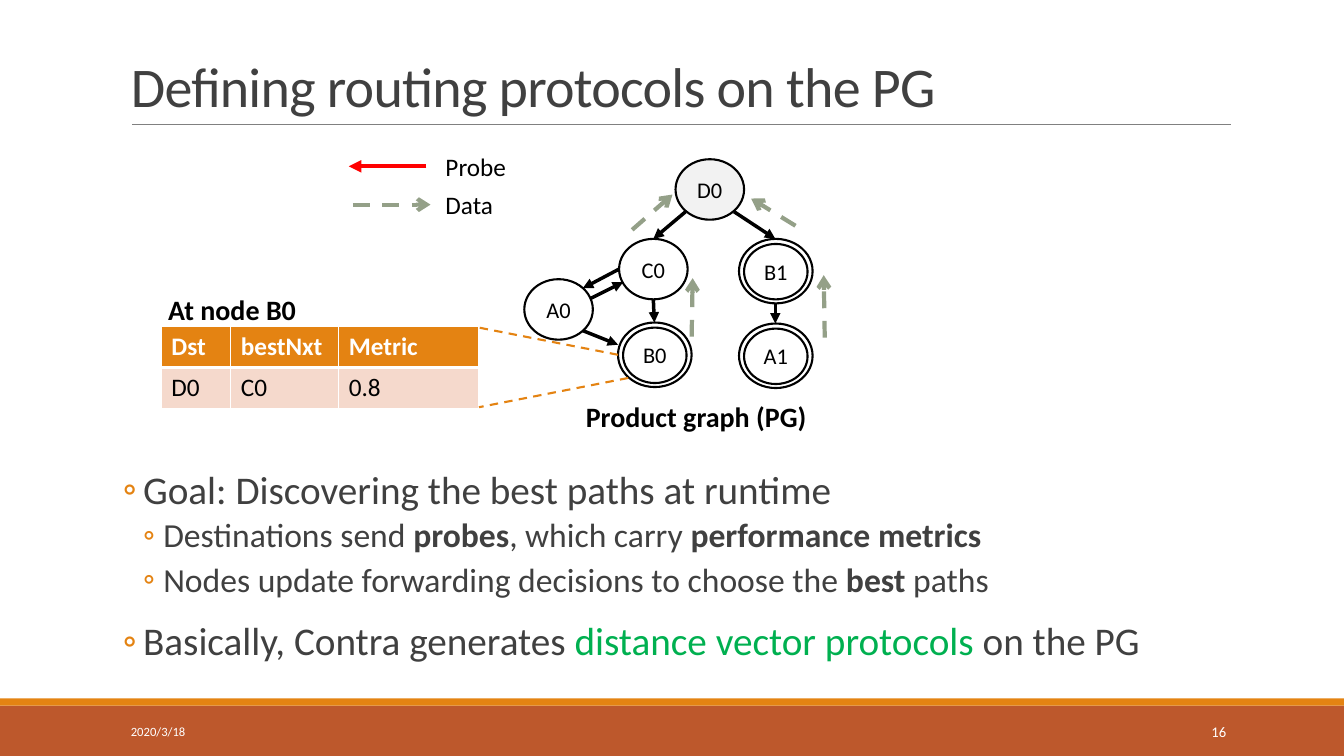
from lxml import etree
from pptx import Presentation
from pptx.dml.color import RGBColor
from pptx.enum import dml, shapes, text
from pptx.oxml import ns
from pptx.util import Inches, Pt

BLACK = RGBColor(0x00, 0x00, 0x00)
WHITE = RGBColor(0xFF, 0xFF, 0xFF)
INK = RGBColor(0x40, 0x40, 0x40)
RULE = RGBColor(0x80, 0x80, 0x80)
ORANGE = RGBColor(0xE4, 0x83, 0x12)
RUST = RGBColor(0xBD, 0x58, 0x2C)
PEACH = RGBColor(0xF5, 0xD9, 0xCC)
PALE = RGBColor(0xF2, 0xF2, 0xF2)
SAGE = RGBColor(0x94, 0xA0, 0x88)
RED = RGBColor(0xFF, 0x00, 0x00)
GREEN = RGBColor(0x00, 0xB0, 0x50)
FONT = "Calibri"
ALIGN = text.PP_ALIGN
ANCHOR = text.MSO_ANCHOR


def child(parent, tag, **attributes):
    """Append a drawing element and return it."""
    return etree.SubElement(parent, ns.qn(tag), attributes)


def style(run, size, color=BLACK, bold=False):
    """Set the font of a run."""
    run.font.name, run.font.size = FONT, Pt(size)
    run.font.color.rgb, run.font.bold = color, bold


def label(slide, box, words, size, color=BLACK, bold=False, align=ALIGN.LEFT,
          anchor=ANCHOR.TOP, wrap=True):
    """Add one line of text in a box and return its run."""
    frame = slide.shapes.add_textbox(*map(Inches, box)).text_frame
    frame.word_wrap, frame.vertical_anchor = wrap, anchor
    paragraph = frame.paragraphs[0]
    paragraph.text, paragraph.alignment = words, align
    style(paragraph.runs[0], size, color, bold)
    return paragraph.runs[0]


def line(slide, start, end, color, width, dashed=False, arrow=None):
    """Draw a straight line, with an optional arrowhead at its end."""
    stroke = slide.shapes.add_connector(
        shapes.MSO_CONNECTOR.STRAIGHT, *map(Inches, (*start, *end)))
    stroke.line.color.rgb, stroke.line.width = color, Pt(width)
    if dashed:
        stroke.line.dash_style = dml.MSO_LINE.DASH
    properties = stroke._element.spPr
    if arrow:
        child(properties.find(ns.qn("a:ln")), "a:tailEnd", type=arrow)
    child(properties, "a:effectLst")


def band(slide, box, color):
    """Draw a plain filled rectangle."""
    strip = slide.shapes.add_shape(shapes.MSO_SHAPE.RECTANGLE, *map(Inches, box))
    strip.shadow.inherit = False
    strip.fill.solid()
    strip.fill.fore_color.rgb = color
    strip.line.fill.background()


def ring(slide, box, fill=None):
    """Draw a black outlined ellipse and return it."""
    oval = slide.shapes.add_shape(shapes.MSO_SHAPE.OVAL, *map(Inches, box))
    oval.shadow.inherit = False
    if fill is None:
        oval.fill.background()
    else:
        oval.fill.solid()
        oval.fill.fore_color.rgb = fill
    oval.line.color.rgb, oval.line.width = BLACK, Pt(1.5)
    return oval


def node(slide, left, top, name, double=False, fill=None):
    """Draw a named graph node; accepting nodes have a double ring."""
    width, height = (0.73, 0.64) if double else (0.68, 0.6)
    if double:
        ring(slide, (left + 0.05, top + 0.05, width - 0.1, height - 0.09))
    oval = ring(slide, (left, top, width, height), fill)
    frame = oval.text_frame
    frame.word_wrap, frame.vertical_anchor = False, ANCHOR.MIDDLE
    frame.text = name
    frame.paragraphs[0].alignment = ALIGN.CENTER
    style(frame.paragraphs[0].runs[0], 16)


def header(slide, left, top, width, height):
    """Place the title and the rule under it."""
    title = label(slide, (left, top, width, height),
                  "Defining routing protocols on the PG", 40, INK,
                  anchor=ANCHOR.BOTTOM)
    title._r.get_or_add_rPr().set("spc", "-50")
    title._r.getparent().get_or_add_pPr()
    slide.shapes[-1].text_frame.paragraphs[0].line_spacing = 0.85
    base = top + height
    line(slide, (left + 0.11, base), (left + width + 0.01, base), RULE, 0.5)


def footer(slide, left, top, width, height):
    """Place the two bands with date and page number."""
    band(slide, (left, top + 0.07, width, height - 0.07), RUST)
    band(slide, (left, top, width, 0.07), ORANGE)
    label(slide, (left + 1.2, top + 0.13, 2.7, 0.4), "2020/3/18", 9, WHITE,
          anchor=ANCHOR.MIDDLE)
    label(slide, (left + 10.83, top + 0.13, 1.43, 0.4), "16", 10.5, WHITE,
          align=ALIGN.RIGHT, anchor=ANCHOR.MIDDLE)


def legend(slide, left, top):
    """Explain the probe and data arrows."""
    label(slide, (left + 0.86, top, 0.81, 0.4), "Probe", 18, wrap=False)
    line(slide, (left + 0.77, top + 0.2), (left, top + 0.2), RED, 3, arrow="triangle")
    label(slide, (left + 0.86, top + 0.38, 0.68, 0.4), "Data", 18, wrap=False)
    line(slide, (left + 0.04, top + 0.58), (left + 0.81, top + 0.58), SAGE, 3,
         True, "arrow")


def product_graph(slide, left, top):
    """Draw the product graph with its edges, data flows and caption."""
    edges = [((2.08, 0.52), (2.49, 0.79)), ((2.49, 1.43), (2.49, 1.63)),
             ((1.28, 1.39), (1.29, 1.62)), ((1.6, 0.52), (1.28, 0.79)),
             ((0.94, 1.09), (0.58, 1.28)), ((0.58, 1.7), (0.93, 1.84)),
             ((0.66, 1.38), (0.98, 1.22))]
    flows = [((1.66, 1.76), (1.67, 1.18)), ((1.07, 0.7), (1.47, 0.35)),
             ((2.69, 0.66), (2.25, 0.39)), ((2.98, 1.77), (2.97, 1.15))]
    nodes = [(1.5, 0, "D0", False, PALE), (0.94, 0.79, "C0"), (0, 1.19, "A0"),
             (0.93, 1.62, "B0", True), (2.13, 1.63, "A1", True),
             (2.13, 0.79, "B1", True)]

    def place(point):
        return left + point[0], top + point[1]

    for start, end in edges:
        line(slide, place(start), place(end), BLACK, 2.5, arrow="triangle")
    for x, y, *details in nodes:
        node(slide, *place((x, y)), *details)
    for start, end in flows:
        line(slide, place(start), place(end), SAGE, 3, True, "arrow")
    label(slide, (*place((0.36, 2.33)), 2.69, 0.44), "Product graph (PG)", 20,
          bold=True, align=ALIGN.CENTER)


def border(cell, top, bottom):
    """Give a cell white borders of the given top and bottom widths."""
    properties = cell._tc.get_or_add_tcPr()
    for side, width in (("L", 1), ("R", 1), ("T", top), ("B", bottom)):
        edge = child(properties, "a:ln" + side, w=str(Pt(width)))
        child(child(edge, "a:solidFill"), "a:srgbClr", val=str(WHITE))


def forwarding_table(slide, left, top):
    """Place the table of node B0 and the dashed lines to that node."""
    widths, row_height = (0.69, 1.07, 1.39), 0.405
    rows = [("Dst", "bestNxt", "Metric"), ("D0", "C0", "0.8")]
    looks = [(ORANGE, WHITE, True, 1, 3), (PEACH, BLACK, False, 3, 1)]
    grid = slide.shapes.add_table(
        len(rows), len(widths), Inches(left), Inches(top), Inches(sum(widths)),
        Inches(row_height * len(rows))).table
    for column, width in zip(grid.columns, widths):
        column.width = Inches(width)
    for r, (entries, look) in enumerate(zip(rows, looks)):
        fill, color, bold, upper, lower = look
        for c, entry in enumerate(entries):
            cell = grid.cell(r, c)
            border(cell, upper, lower)
            cell.fill.solid()
            cell.fill.fore_color.rgb = fill
            cell.text = entry
            style(cell.text_frame.paragraphs[0].runs[0], 18, color, bold)
    label(slide, (left - 0.03, top - 0.39, 1.48, 0.44), "At node B0", 20,
          bold=True, wrap=False)
    right = left + sum(widths)
    line(slide, (left + 4.53, top + 0.28), (right, top + 0.01), ORANGE, 1.5, True)
    line(slide, (left + 4.63, top + 0.51), (right, top + 0.8), ORANGE, 1.5, True)


def goals(slide, left, top, width, height):
    """Place the bulleted text, two levels deep."""
    points = [
        (0, [("Goal: Discovering the best paths at runtime",)]),
        (1, [("Destinations send ",), ("probes", INK, True), (", which carry ",),
             ("performance metrics", INK, True)]),
        (1, [("Nodes update forwarding decisions to choose the ",),
             ("best", INK, True), (" paths",)]),
        (0, [("Basically, Contra generates ",),
             ("distance vector protocols ", GREEN), ("on the PG",)])]
    levels = [(28, 0.22, 12, 2), (24, 0.42, 2, 4)]
    frame = slide.shapes.add_textbox(
        *map(Inches, (left, top, width, height))).text_frame
    frame.word_wrap = True
    frame.margin_left = frame.margin_right = 0
    for index, (level, pieces) in enumerate(points):
        point = frame.add_paragraph() if index else frame.paragraphs[0]
        size, indent, before, after = levels[level]
        point.level, point.line_spacing = level, 0.9
        point.space_before, point.space_after = Pt(before), Pt(after)
        properties = point._p.get_or_add_pPr()
        properties.set("marL", str(Inches(indent)))
        properties.set("indent", str(Inches(-0.2)))
        child(child(properties, "a:buClr"), "a:srgbClr", val=str(ORANGE))
        child(properties, "a:buFont", typeface=FONT)
        child(properties, "a:buChar", char="◦")
        for words, *look in pieces:
            run = point.add_run()
            run.text = words
            style(run, size, *(look or [INK]))


def main():
    """Build the slide and save it."""
    deck = Presentation()
    deck.slide_width, deck.slide_height = Inches(13.33), Inches(7.5)
    slide = deck.slides.add_slide(deck.slide_layouts[6])
    footer(slide, 0, 6.93, 13.33, 0.57)
    header(slide, 1.2, 0.31, 11, 0.92)
    goals(slide, 1.2, 4.62, 11, 2.13)
    product_graph(slide, 5.2, 1.58)
    legend(slide, 3.46, 1.45)
    forwarding_table(slide, 1.6, 3.24)
    deck.save("out.pptx")


if __name__ == "__main__":
    main()
